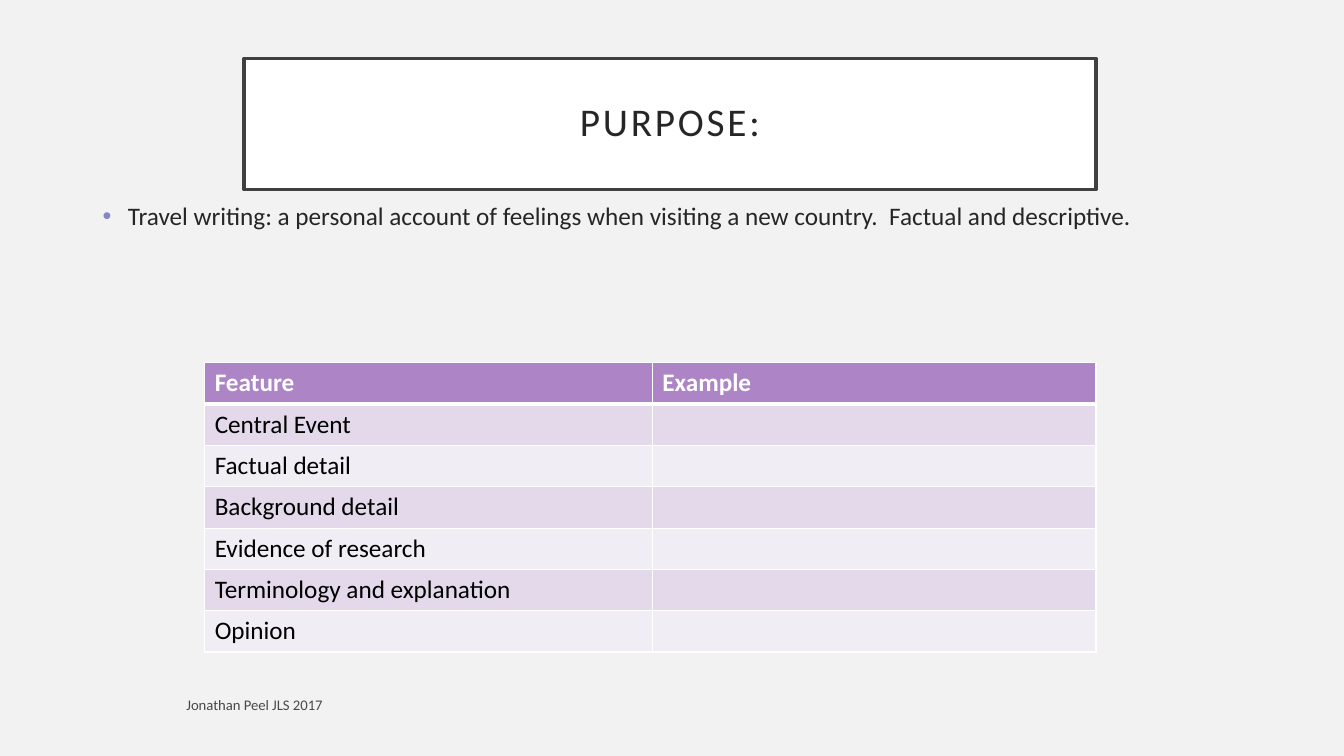
import pptx
import pptx.dml.color
import pptx.enum.shapes
import pptx.enum.text
import pptx.oxml
import pptx.oxml.ns
import pptx.util
from lxml import etree

Inches = pptx.util.Inches
Pt = pptx.util.Pt
RGBColor = pptx.dml.color.RGBColor
PP_ALIGN = pptx.enum.text.PP_ALIGN
ANCHOR = pptx.enum.text.MSO_ANCHOR
qn = pptx.oxml.ns.qn

FONT = "Calibri"
BACKGROUND = RGBColor(0xF2, 0xF2, 0xF2)
WHITE = RGBColor(0xFF, 0xFF, 0xFF)
BLACK = RGBColor(0x00, 0x00, 0x00)
FRAME = RGBColor(0x40, 0x40, 0x40)
INK = RGBColor(0x26, 0x26, 0x26)
BULLET = RGBColor(0x87, 0x84, 0xC7)
HEADER_FILL = RGBColor(0xAD, 0x84, 0xC6)
BAND_FILLS = (RGBColor(0xF1, 0xED, 0xF5), RGBColor(0xE3, 0xD9, 0xEA))

HEADINGS = ("Feature", "Example")
FEATURES = ("Central Event", "Factual detail", "Background detail",
            "Evidence of research", "Terminology and explanation", "Opinion")
COLUMN_WIDTHS = (4.44, 4.4)
ROW_HEIGHT = 0.41


def add_run(paragraph, text, size, color, bold=False):
    run = paragraph.add_run()
    run.text = text
    run.font.name = FONT
    run.font.size = Pt(size)
    run.font.bold = bold
    run.font.color.rgb = color
    return run


def add_title(slide, text):
    title = slide.shapes.add_shape(
        pptx.enum.shapes.MSO_SHAPE.RECTANGLE,
        Inches(2.42), Inches(0.58), Inches(8.45), Inches(1.3))
    title.shadow.inherit = False
    title.fill.solid()
    title.fill.fore_color.rgb = WHITE
    title.line.color.rgb = FRAME
    title.line.width = Pt(2.5)
    frame = title.text_frame
    frame.word_wrap = True
    frame.vertical_anchor = ANCHOR.MIDDLE
    frame.margin_left = frame.margin_right = Inches(0.2)
    frame.margin_top = frame.margin_bottom = Inches(0.2)
    paragraph = frame.paragraphs[0]
    paragraph.alignment = PP_ALIGN.CENTER
    paragraph.line_spacing = 0.9
    run = add_run(paragraph, text, 28, INK)
    run.font._element.set("spc", "200")


def add_text_box(slide, left, top, width, height, anchor):
    box = slide.shapes.add_textbox(
        Inches(left), Inches(top), Inches(width), Inches(height))
    box.text_frame.word_wrap = True
    box.text_frame.vertical_anchor = anchor
    return box.text_frame.paragraphs[0]


def set_bullet(paragraph, symbol, color, indent):
    properties = paragraph._p.get_or_add_pPr()
    properties.set("marL", str(Inches(indent)))
    properties.set("indent", str(-Inches(indent)))
    bullet_color = etree.SubElement(properties, qn("a:buClr"))
    etree.SubElement(bullet_color, qn("a:srgbClr"), val=str(color))
    etree.SubElement(properties, qn("a:buFont"), typeface="Arial")
    etree.SubElement(properties, qn("a:buChar"), char=symbol)


def set_opacity(run, percent):
    color = run.font._element.find(".//" + qn("a:srgbClr"))
    etree.SubElement(color, qn("a:alpha"), val=str(percent * 1000))


def style_cell(cell, fill, top_width, bottom_width):
    properties = cell._tc.get_or_add_tcPr()
    # Borders come before the fill in the cell properties
    widths = {"a:lnL": 1, "a:lnR": 1, "a:lnT": top_width, "a:lnB": bottom_width}
    for side, width in widths.items():
        border = etree.SubElement(properties, qn(side), w=str(Pt(width)))
        solid = etree.SubElement(border, qn("a:solidFill"))
        etree.SubElement(solid, qn("a:srgbClr"), val=str(WHITE))
    cell.fill.solid()
    cell.fill.fore_color.rgb = fill


def add_feature_table(slide):
    rows = [HEADINGS] + [(feature, "") for feature in FEATURES]
    table = slide.shapes.add_table(
        len(rows), len(HEADINGS), Inches(2.03), Inches(3.6),
        Inches(sum(COLUMN_WIDTHS)), Inches(ROW_HEIGHT * len(rows))).table
    for column, width in zip(table.columns, COLUMN_WIDTHS):
        column.width = Inches(width)
    for row_index, texts in enumerate(rows):
        table.rows[row_index].height = Inches(ROW_HEIGHT)
        header = row_index == 0
        fill = HEADER_FILL if header else BAND_FILLS[row_index % 2]
        for column_index, text in enumerate(texts):
            cell = table.cell(row_index, column_index)
            style_cell(cell, fill, 3 if row_index == 1 else 1, 3 if header else 1)
            paragraph = cell.text_frame.paragraphs[0]
            if text:
                add_run(paragraph, text, 18, WHITE if header else BLACK, header)
            else:
                paragraph.font.size = Pt(18)


def main():
    presentation = pptx.Presentation()
    presentation.slide_width = Inches(13.33)
    presentation.slide_height = Inches(7.5)
    slide = presentation.slides.add_slide(presentation.slide_layouts[6])
    slide.background.fill.solid()
    slide.background.fill.fore_color.rgb = BACKGROUND

    add_title(slide, "PURPOSE:")

    # Definition of the genre
    definition = add_text_box(slide, 0.92, 1.94, 11.5, 4.76, ANCHOR.TOP)
    definition.space_before = Pt(10)
    set_bullet(definition, "•", BULLET, 0.25)
    add_run(definition, "Travel writing: a personal account of feelings when "
            "visiting a new country.  Factual and descriptive.", 18, INK)

    # Footer
    footer = add_text_box(slide, 1.75, 6.82, 6.45, 0.35, ANCHOR.MIDDLE)
    set_opacity(add_run(footer, "Jonathan Peel JLS 2017", 10.5, BLACK), 70)

    add_feature_table(slide)
    presentation.save("out.pptx")


if __name__ == "__main__":
    main()
